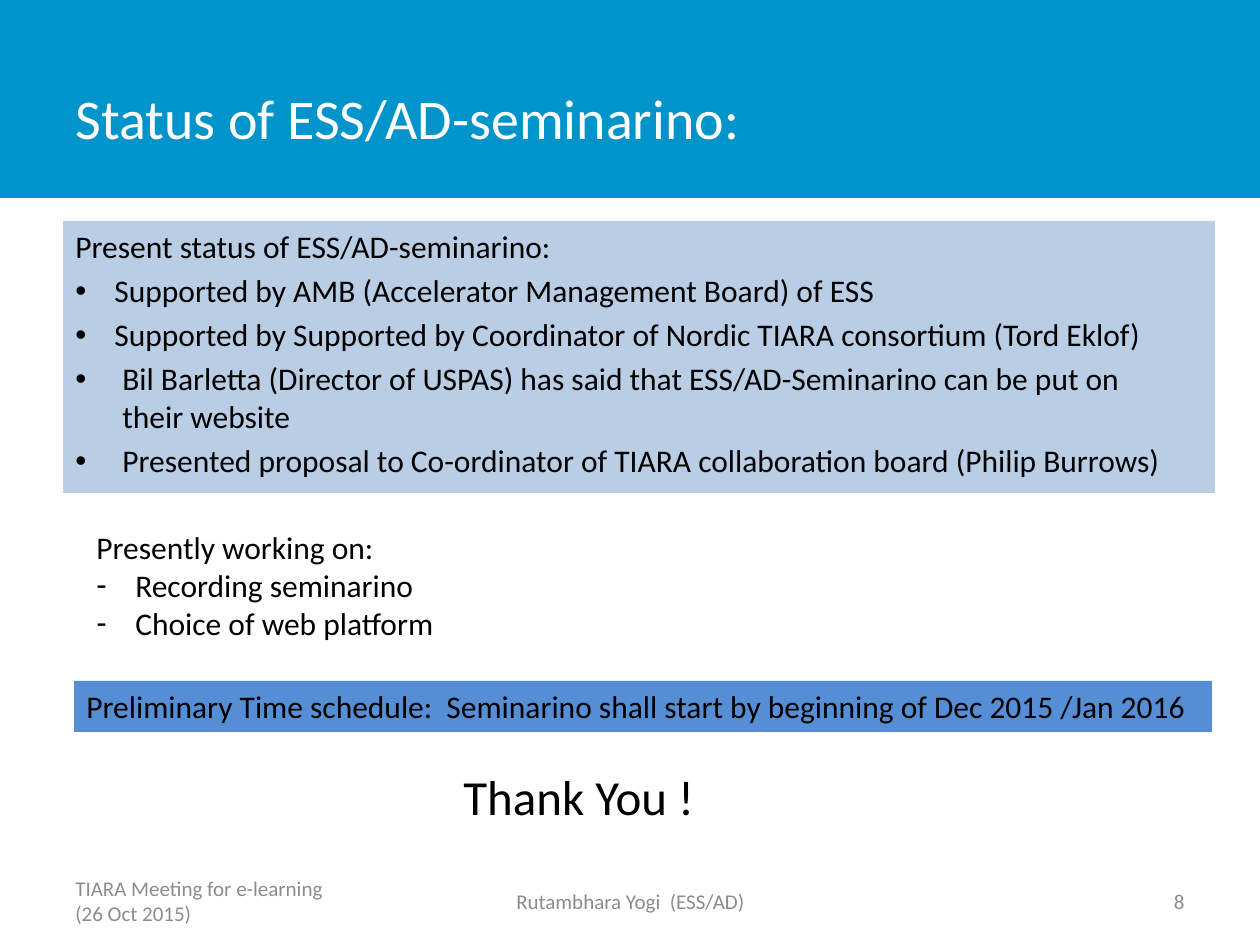
import pptx
import pptx.dml.color
import pptx.enum.shapes
import pptx.enum.text
import pptx.util
from lxml import etree

PX = 914400 / 126
COLORS = {
    "banner": "0094CA",
    "status": "B9CDE5",
    "schedule": "558ED5",
    "title": "FFFFFF",
    "body": "000000",
    "footer": "8C8C8C",
}
ALIGN = pptx.enum.text.PP_ALIGN
ANCHOR = pptx.enum.text.MSO_ANCHOR
RECT = pptx.enum.shapes.MSO_SHAPE.RECTANGLE


def emu(px):
    return pptx.util.Emu(round(px * PX))


def add_block(box, lines, size, color, fill=None, align=ALIGN.LEFT,
              anchor=ANCHOR.TOP, gap=0, fit=False):
    left, top, width, height = map(emu, box)
    if fill:
        block = slide.shapes.add_shape(RECT, left, top, width, height)
        block.shadow.inherit = False
        block.fill.solid()
        block.fill.fore_color.rgb = pptx.dml.color.RGBColor.from_string(COLORS[fill])
        block.line.fill.background()
    else:
        block = slide.shapes.add_textbox(left, top, width, height)
    frame = block.text_frame
    frame.word_wrap = True
    frame.vertical_anchor = anchor
    if fit:
        frame.auto_size = pptx.enum.text.MSO_AUTO_SIZE.SHAPE_TO_FIT_TEXT
    for number, (text, bullet, indent) in enumerate(lines):
        paragraph = frame.paragraphs[0] if number == 0 else frame.add_paragraph()
        paragraph.alignment = align
        if number and gap:
            paragraph.space_before = pptx.util.Pt(gap)
        if bullet:
            properties = paragraph._p.get_or_add_pPr()
            properties.set("marL", str(emu(indent)))
            properties.set("indent", str(-emu(indent)))
            for tag, key, value in (("a:buFont", "typeface", "Arial"),
                                    ("a:buChar", "char", bullet)):
                etree.SubElement(properties, pptx.oxml.ns.qn(tag)).set(key, value)
        run = paragraph.add_run()
        run.text = text
        run.font.name = "Calibri"
        run.font.size = pptx.util.Pt(size)
        run.font.color.rgb = pptx.dml.color.RGBColor.from_string(COLORS[color])


deck = pptx.Presentation()
deck.slide_width = emu(1260)
deck.slide_height = emu(945)
slide = deck.slides.add_slide(deck.slide_layouts[6])

add_block((0, 0, 1260, 198), [], 18, "body", fill="banner")
add_block((63, 38, 984, 158), [("Status of ESS/AD-seminarino:", None, 0)],
          32, "title", anchor=ANCHOR.MIDDLE)

status_lines = [
    ("Present status of ESS/AD-seminarino:", None, 0),
    ("Supported by AMB (Accelerator Management Board) of ESS", "•", 39),
    ("Supported by Supported by Coordinator of Nordic TIARA consortium (Tord Eklof)", "•", 39),
    ("Bil Barletta (Director of USPAS) has said that ESS/AD-Seminarino can be put on \ttheir website", "•", 47),
    ("Presented proposal to Co-ordinator of TIARA collaboration board (Philip Burrows)", "•", 47),
]
add_block((63, 221, 1152, 272), status_lines, 18, "body", fill="status", gap=3.6, fit=True)

working_lines = [
    ("Presently working on:", None, 0),
    ("Recording seminarino", "-", 39),
    ("Choice of web platform", "-", 39),
]
add_block((84, 522, 364, 127), working_lines, 18, "body", fit=True)

schedule = "Preliminary Time schedule:  Seminarino shall start by beginning of Dec 2015 /Jan 2016"
add_block((74, 681, 1138, 51), [(schedule, None, 0)], 18, "body", fill="schedule", fit=True)
add_block((451, 760, 262, 72), [("Thank You !", None, 0)], 28, "body", fit=True)

footers = [
    (63, 294, "TIARA Meeting for e-learning (26 Oct 2015)", ALIGN.LEFT),
    (431, 399, "Rutambhara Yogi  (ESS/AD)", ALIGN.CENTER),
    (903, 294, "8", ALIGN.RIGHT),
]
for left, width, text, align in footers:
    add_block((left, 876, width, 50), [(text, None, 0)], 12, "footer",
              align=align, anchor=ANCHOR.MIDDLE)

deck.save("out.pptx")
